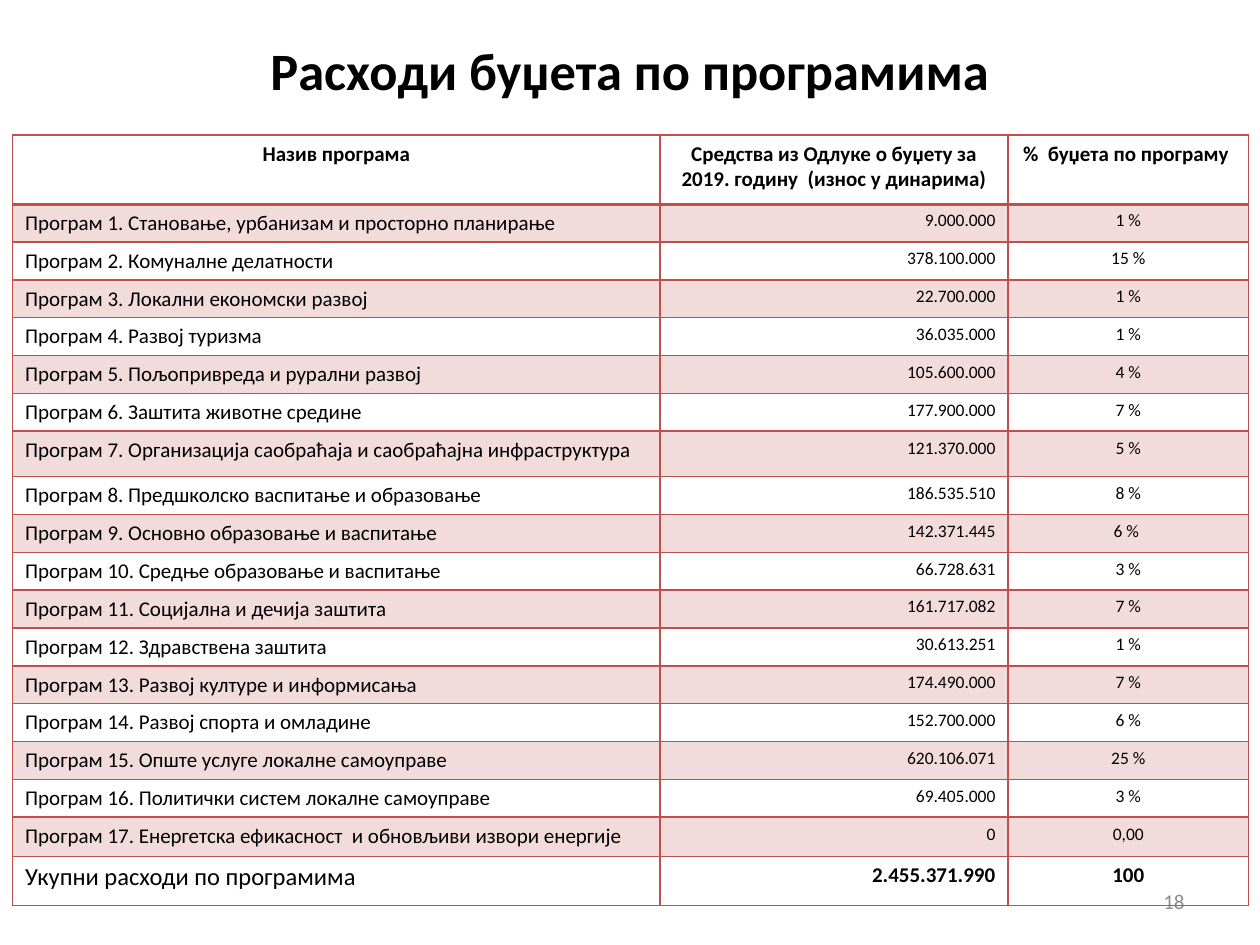
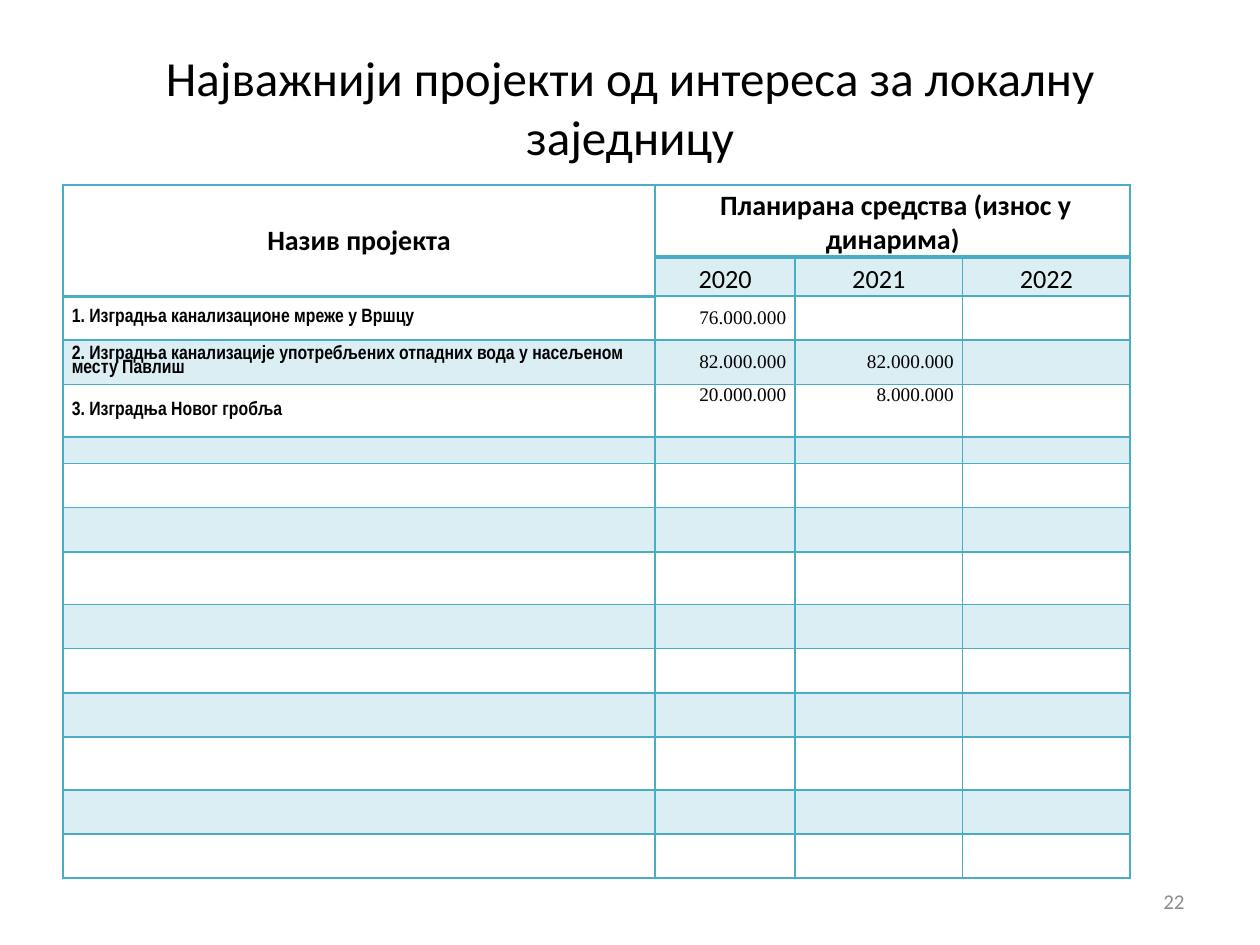
from lxml.etree import SubElement
from pptx import Presentation
from pptx.dml.color import RGBColor
from pptx.enum.text import MSO_ANCHOR as Anchor, MSO_AUTO_SIZE as AutoSize, PP_ALIGN as Align
from pptx.oxml.ns import qn
from pptx.util import Inches, Pt

COLORS = {
    "text": "000000",
    "page_number": "8C8C8C",
    "red_line": "C0504D",
    "red_band": "F2DCDB",
    "teal_line": "4BACC6",
    "teal_band": "DBEEF4",
}
FONT = "Calibri"
PAGE_NUMBER_BOX = (7.17, 6.95, 2.33, 0.4)
THIN, HEAVY = 1, 2

PROGRAM_HEADINGS = [
    "Назив програма",
    "Средства из Одлуке о буџету за 2019. годину  (износ у динарима)",
    "%  буџета по програму ",
]
PROGRAMS = [
    ("Становање, урбанизам и просторно планирање", "9.000.000", "1 %"),
    ("Комуналне делатности", "378.100.000", "15 %"),
    ("Локални економски развој", "22.700.000", "1 %"),
    ("Развој туризма", "36.035.000", "1 %"),
    ("Пољопривреда и рурални развој", "105.600.000", "4 %"),
    ("Заштита животне средине", "177.900.000", "7 %"),
    ("Организација саобраћаја и саобраћајна инфраструктура", "121.370.000", "5 %"),
    ("Предшколско васпитање и образовање", "186.535.510", "8 %"),
    ("Основно образовање и васпитање", "142.371.445", "6 % "),
    ("Средње образовање и васпитање", "66.728.631", "3 %"),
    ("Социјална и дечија заштита", "161.717.082", "7 %"),
    ("Здравствена заштита", "30.613.251", "1 %"),
    ("Развој културе и информисања", "174.490.000", "7 %"),
    ("Развој спорта и омладине", "152.700.000", "6 %"),
    ("Опште услуге локалне самоуправе", "620.106.071", "25 %"),
    ("Политички систем локалне самоуправе", "69.405.000", "3 %"),
    ("Енергетска ефикасност  и обновљиви извори енергије", "0", "0,00"),
]
PROGRAM_TOTAL = ("Укупни расходи по програмима", "2.455.371.990", "100")

YEARS = ["2020", "2021", "2022"]
PROJECTS = [
    ("1. Изградња канализационе мреже у Вршцу", "76.000.000"),
    ("2. Изградња канализације употребљених отпадних вода у насељеном месту Павлиш",
     "82.000.000", "82.000.000"),
    ("3. Изградња Новог гробља", "20.000.000", "8.000.000"),
]


def inches(box):
    return [Inches(length) for length in box]


def write(paragraph, text, size, align=Align.LEFT, bold=False, font=FONT, color="text"):
    paragraph.text = text
    paragraph.alignment = align
    paragraph.font.name = font
    paragraph.font.size = Pt(size)
    paragraph.font.bold = bold
    paragraph.font.color.rgb = RGBColor.from_string(COLORS[color])


def add_titled_slide(presentation, title, box, size, page_number, bold=False):
    slide = presentation.slides.add_slide(presentation.slide_layouts[5])
    shape = slide.shapes.title
    shape.left, shape.top, shape.width, shape.height = inches(box)
    frame = shape.text_frame
    frame.auto_size = AutoSize.NONE
    frame.vertical_anchor = Anchor.MIDDLE
    write(frame.paragraphs[0], title, size, Align.CENTER, bold)

    number_frame = slide.shapes.add_textbox(*inches(PAGE_NUMBER_BOX)).text_frame
    number_frame.word_wrap = True
    number_frame.vertical_anchor = Anchor.MIDDLE
    write(number_frame.paragraphs[0], page_number, 12, Align.RIGHT, color="page_number")
    return slide


def add_border(cell, side, color, width):
    line = SubElement(cell._tc.get_or_add_tcPr(), qn(f"a:ln{side}"), w=str(Pt(width)))
    fill = SubElement(line, qn("a:solidFill"))
    SubElement(fill, qn("a:srgbClr"), val=COLORS[color])


def add_ruled_table(slide, box, columns, rows, theme, is_banded, heavy_below):
    """Add a table; heavy_below holds the (row, column) cells with a heavy lower edge."""
    table = slide.shapes.add_table(len(rows), len(columns), *inches(box)).table
    table.first_row = table.horz_banding = False
    for column, width in zip(table.columns, columns):
        column.width = Inches(width)
    for row, height in zip(table.rows, rows):
        row.height = Inches(height)
    for r, row in enumerate(table.rows):
        for c, cell in enumerate(row.cells):
            widths = {
                "L": THIN,
                "R": THIN,
                "T": HEAVY if (r - 1, c) in heavy_below else THIN,
                "B": HEAVY if (r, c) in heavy_below else THIN,
            }
            for side, width in widths.items():
                add_border(cell, side, f"{theme}_line", width)
            if is_banded(r, c):
                cell.fill.solid()
                cell.fill.fore_color.rgb = RGBColor.from_string(COLORS[f"{theme}_band"])
            else:
                cell.fill.background()
    return table


def write_cell(cell, text, size, align=Align.LEFT, **style):
    write(cell.text_frame.paragraphs[0], text, size, align, **style)


def build_program_slide(presentation):
    slide = add_titled_slide(presentation, "Расходи буџета по програмима",
                             (0.74, 0.13, 8.52, 0.85), 30, "18", bold=True)
    heights = [0.55] + [0.29] * len(PROGRAMS) + [0.39]
    heights[7], heights[17] = 0.36, 0.31
    total_row = len(heights) - 1
    table = add_ruled_table(
        slide, (0.1, 1.07, 9.8, 6.11), [5.14, 2.76, 1.91], heights, "red",
        is_banded=lambda r, c: r % 2 == 1,
        heavy_below={(0, c) for c in range(3)})

    for c, heading in enumerate(PROGRAM_HEADINGS):
        write_cell(table.cell(0, c), heading, 12, Align.CENTER, bold=True)
    for r, (name, amount, share) in enumerate(PROGRAMS, 1):
        write_cell(table.cell(r, 0), f"Програм {r}. {name}", 12)
        write_cell(table.cell(r, 1), amount, 10, Align.RIGHT)
        write_cell(table.cell(r, 2), share, 10, Align.CENTER)
    name, amount, share = PROGRAM_TOTAL
    write_cell(table.cell(total_row, 0), name, 14)
    write_cell(table.cell(total_row, 1), amount, 12, Align.RIGHT, bold=True)
    write_cell(table.cell(total_row, 2), share, 12, Align.CENTER, bold=True)


def build_project_slide(presentation):
    slide = add_titled_slide(presentation, "Најважнији пројекти од интереса за локалну заједницу",
                             (0.5, 0.3, 9, 1.09), 28, "22")
    heights = [0.57, 0.31] + [0.35] * 13
    heights[5] = 0.21
    for r in (4, 8, 12):
        heights[r] = 0.42
    table = add_ruled_table(
        slide, (0.5, 1.47, 8.48, 5.5), [4.7, 1.11, 1.33, 1.33], heights, "teal",
        is_banded=lambda r, c: r % 2 == 1 and (r, c) != (1, 0),
        heavy_below={(0, c) for c in range(4)} | {(1, 0)})

    for cell in table.iter_cells():
        cell.margin_left = cell.margin_right = Inches(0.07)
        cell.margin_top = cell.margin_bottom = 0
        cell.vertical_anchor = Anchor.MIDDLE
        # Empty cells need a small font so that their rows keep their height.
        cell.text_frame.paragraphs[0]._p.get_or_add_endParaRPr().set("sz", "1100")

    table.cell(0, 0).merge(table.cell(1, 0))
    table.cell(0, 1).merge(table.cell(0, 3))
    write_cell(table.cell(0, 0), "Назив пројекта", 16, Align.CENTER, bold=True)
    write_cell(table.cell(0, 1), " Планирана средства (износ у динарима)", 16,
               Align.CENTER, bold=True)
    table.cell(0, 1).vertical_anchor = Anchor.BOTTOM
    for c, year in enumerate(YEARS, 1):
        write_cell(table.cell(1, c), year, 15, Align.CENTER)
        table.cell(1, c).vertical_anchor = Anchor.BOTTOM

    for r, (name, *amounts) in enumerate(PROJECTS, 2):
        write_cell(table.cell(r, 0), name, 11, bold=True, font="Arial Narrow")
        table.cell(r, 0).text_frame.paragraphs[0].line_spacing = 0.8
        for c, amount in enumerate(amounts, 1):
            write_cell(table.cell(r, c), amount, 11, Align.RIGHT, font="Times New Roman")
    for c in (1, 2):
        table.cell(4, c).vertical_anchor = Anchor.TOP


def main():
    presentation = Presentation()
    presentation.slide_width, presentation.slide_height = Inches(10), Inches(7.5)
    build_program_slide(presentation)
    build_project_slide(presentation)
    presentation.save("out.pptx")


if __name__ == "__main__":
    main()
